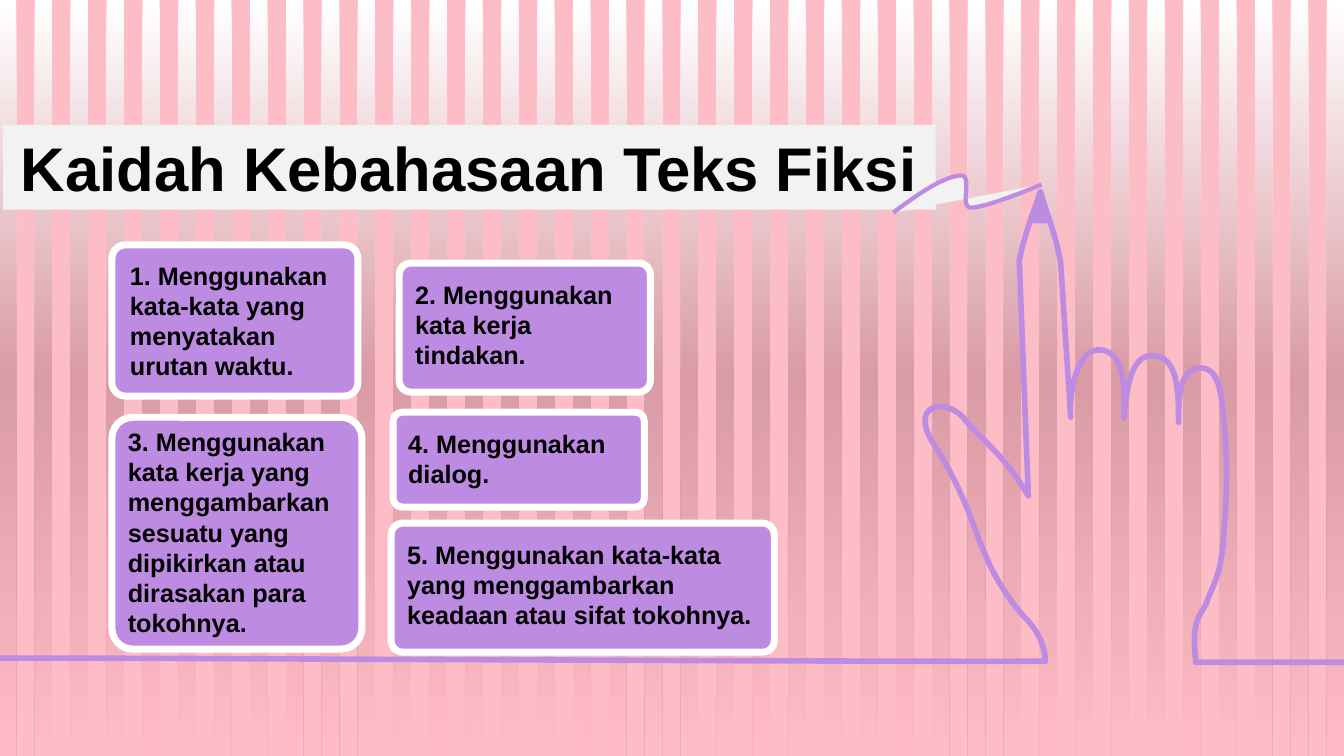
"""Build a slide on the language features of fiction texts, with a drawing hand."""
from copy import deepcopy
from dataclasses import dataclass

from pptx import Presentation
from pptx.dml.color import RGBColor
from pptx.enum.shapes import MSO_SHAPE
from pptx.enum.text import MSO_ANCHOR, MSO_AUTO_SIZE, PP_ALIGN
from pptx.oxml.ns import qn
from pptx.util import Inches, Pt

RECTANGLE = MSO_SHAPE.RECTANGLE
ROUNDED = MSO_SHAPE.ROUNDED_RECTANGLE
TRIANGLE = MSO_SHAPE.ISOSCELES_TRIANGLE
MIDDLE = MSO_ANCHOR.MIDDLE
GROW = MSO_AUTO_SIZE.SHAPE_TO_FIT_TEXT
LEFT, CENTER = PP_ALIGN.LEFT, PP_ALIGN.CENTER


@dataclass(frozen=True)
class Theme:
    """Colours, font and sizes of the slide."""
    font: str = "Arial"
    title_size: int = 44
    card_size: int = 18
    ink: str = "000000"
    pink: str = "FDBDC7"
    purple: str = "BE8BE2"
    white: str = "FFFFFF"
    paper: str = "F2F2F2"
    stripes: tuple = ((0, "FFFFFF"), (0.5, "D99BA5"), (1, "FFBBC6"))
    card_line: int = 5
    hand_line: int = 4
    scribble_line: int = 3


THEME = Theme()
WIDTH, HEIGHT = 13.33, 7.5
STRIPE_COUNT, STRIPE_WIDTH, STRIPE_START = 38, 0.17, -0.01
CURVE_STEPS = 16
CARD_RADIUS = 0.09

TITLE = ("Kaidah Kebahasaan Teks Fiksi", (0.03, 1.24, 9.25, 0.84))
CARDS = [
    ("1. Menggunakan kata-kata yang menyatakan urutan waktu.",
     (1.11, 2.43, 2.44, 1.5), (1.19, 2.53, 2.31, 1.31)),
    ("2. Menggunakan kata kerja tindakan.",
     (3.96, 2.61, 2.49, 1.28), (4.02, 2.72, 2.3, 1.01)),
    ("3. Menggunakan kata kerja yang menggambarkan sesuatu yang dipikirkan "
     "atau dirasakan para tokohnya.",
     (1.11, 4.14, 2.48, 2.3), (1.17, 4.18, 2.47, 2.52)),
    ("4. Menggunakan dialog.",
     (3.9, 4.09, 2.49, 0.94), (3.95, 4.2, 2.3, 0.71)),
    ("5. Menggunakan kata-kata yang menggambarkan keadaan atau sifat tokohnya.",
     (3.88, 5.19, 3.8, 1.28), (3.94, 5.3, 3.62, 1.01)),
]
PENCIL_TIP = (10.19, 1.9, 0.25, 0.31)
SCRIBBLE = [
    (8.86, 2.11),
    (9.2, 1.85, 9.4, 1.75, 9.53, 1.74),
    (9.66, 1.74, 9.5, 2.07, 9.64, 2.06),
    (9.77, 2.06, 10.27, 1.86, 10.33, 1.83),
]
HAND = [
    (0, 6.53),
    (0.14, 6.52, 9.07, 6.57, 10.37, 6.56),
    (10.36, 6.36, 10.26, 6.22, 10.15, 6.11),
    (9.65, 5.53, 9.74, 5.15, 9.27, 4.42),
    (9, 4.02, 9.37, 3.93, 9.56, 4.15),
    (9.71, 4.34, 9.96, 4.51, 10.2, 4.92),
    (10.11, 2.58),
    (10.18, 2.28, 10.2, 2.25, 10.32, 1.9),
    (10.42, 2.25, 10.46, 2.29, 10.52, 2.6),
    (10.62, 4.14),
    (10.6, 3.93, 10.67, 3.47, 10.9, 3.47),
    (11.18, 3.48, 11.15, 3.91, 11.15, 4.15),
    (11.17, 3.85, 11.22, 3.52, 11.43, 3.53),
    (11.68, 3.53, 11.69, 3.87, 11.69, 4.19),
    (11.69, 3.94, 11.69, 3.65, 11.92, 3.65),
    (12.09, 3.67, 12.11, 3.88, 12.14, 4.17),
    (12.18, 4.66, 12.17, 4.9, 12.13, 5.41),
    (12.1, 5.73, 12.02, 5.82, 11.96, 6),
    (11.85, 6.17, 11.83, 6.24, 11.86, 6.57),
    (13.33, 6.57),
]


def to_inches(values):
    return tuple(Inches(value) for value in values)


def style(shape, fill=None, line=None, weight=0):
    shape.shadow.inherit = False
    for part, color in ((shape.fill, fill), (shape.line.fill, line)):
        if color:
            part.solid()
            part.fore_color.rgb = RGBColor.from_string(color)
        else:
            part.background()
    if line:
        shape.line.width = Pt(weight)


def trace(segments):
    """Turn lines (2 numbers) and Bezier curves (6 numbers) into points."""
    points = [segments[0]]
    for segment in segments[1:]:
        if len(segment) == 2:
            points.append(segment)
            continue
        knots = [points[-1], segment[:2], segment[2:4], segment[4:]]
        for step in range(1, CURVE_STEPS + 1):
            t = step / CURVE_STEPS
            weights = ((1 - t) ** 3, 3 * t * (1 - t) ** 2, 3 * t * t * (1 - t), t ** 3)
            points.append(tuple(sum(w * knot[axis] for w, knot in zip(weights, knots))
                                for axis in (0, 1)))
    return points


def add_outline(shapes, segments):
    start, *rest = [to_inches(point) for point in trace(segments)]
    builder = shapes.build_freeform(*start)
    builder.add_line_segments(rest, close=False)
    return builder.convert_to_shape()


def add_text(shape, text, size, align):
    frame = shape.text_frame
    frame.word_wrap = True
    frame.auto_size = GROW
    para = frame.paragraphs[0]
    para.alignment = align
    span = para.add_run()
    span.text = text
    span.font.name = THEME.font
    span.font.size = Pt(size)
    span.font.bold = True
    span.font.color.rgb = RGBColor.from_string(THEME.ink)


def add_stripes(shapes):
    pitch = (WIDTH - STRIPE_WIDTH - STRIPE_START) / (STRIPE_COUNT - 1)
    builder = shapes.build_freeform(Inches(STRIPE_START), 0)
    for index in range(STRIPE_COUNT):
        left = STRIPE_START + index * pitch
        right = left + STRIPE_WIDTH
        if index:
            builder.move_to(Inches(left), 0)
        corners = ((right, 0), (right, HEIGHT), (left, HEIGHT))
        builder.add_line_segments([to_inches(corner) for corner in corners])
    stripes = builder.convert_to_shape()
    style(stripes)
    stripes.fill.gradient()
    stripes.fill.gradient_angle = 270
    stop_list = next(stripes.element.iter(qn("a:gsLst")))
    stop_list.append(deepcopy(stop_list[0]))
    for stop, (position, color) in zip(stripes.fill.gradient_stops, THEME.stripes):
        stop.position = position
        stop.color.rgb = RGBColor.from_string(color)


def add_title(shapes):
    text, place = TITLE
    banner = shapes.add_shape(RECTANGLE, *to_inches(place))
    style(banner, THEME.paper)
    banner.text_frame.vertical_anchor = MIDDLE
    add_text(banner, text, THEME.title_size, CENTER)
    scribble = add_outline(shapes, SCRIBBLE)
    style(scribble, THEME.paper, THEME.purple, THEME.scribble_line)


def add_hand(shapes):
    style(add_outline(shapes, HAND), None, THEME.purple, THEME.hand_line)
    tip = shapes.add_shape(TRIANGLE, *to_inches(PENCIL_TIP))
    style(tip, THEME.purple, THEME.purple, 1)


def add_card(shapes, text, card_place, text_place):
    card = shapes.add_shape(ROUNDED, *to_inches(card_place))
    card.adjustments[0] = CARD_RADIUS
    style(card, THEME.purple, THEME.white, THEME.card_line)
    box = shapes.add_textbox(*to_inches(text_place))
    add_text(box, text, THEME.card_size, LEFT)


def main():
    deck = Presentation()
    deck.slide_width, deck.slide_height = to_inches((WIDTH, HEIGHT))
    page = deck.slides.add_slide(deck.slide_layouts[6])
    page.background.fill.solid()
    page.background.fill.fore_color.rgb = RGBColor.from_string(THEME.pink)
    add_stripes(page.shapes)
    add_title(page.shapes.add_group_shape().shapes)
    add_hand(page.shapes.add_group_shape().shapes)
    for card in CARDS:
        add_card(page.shapes, *card)
    deck.save("out.pptx")


if __name__ == "__main__":
    main()
